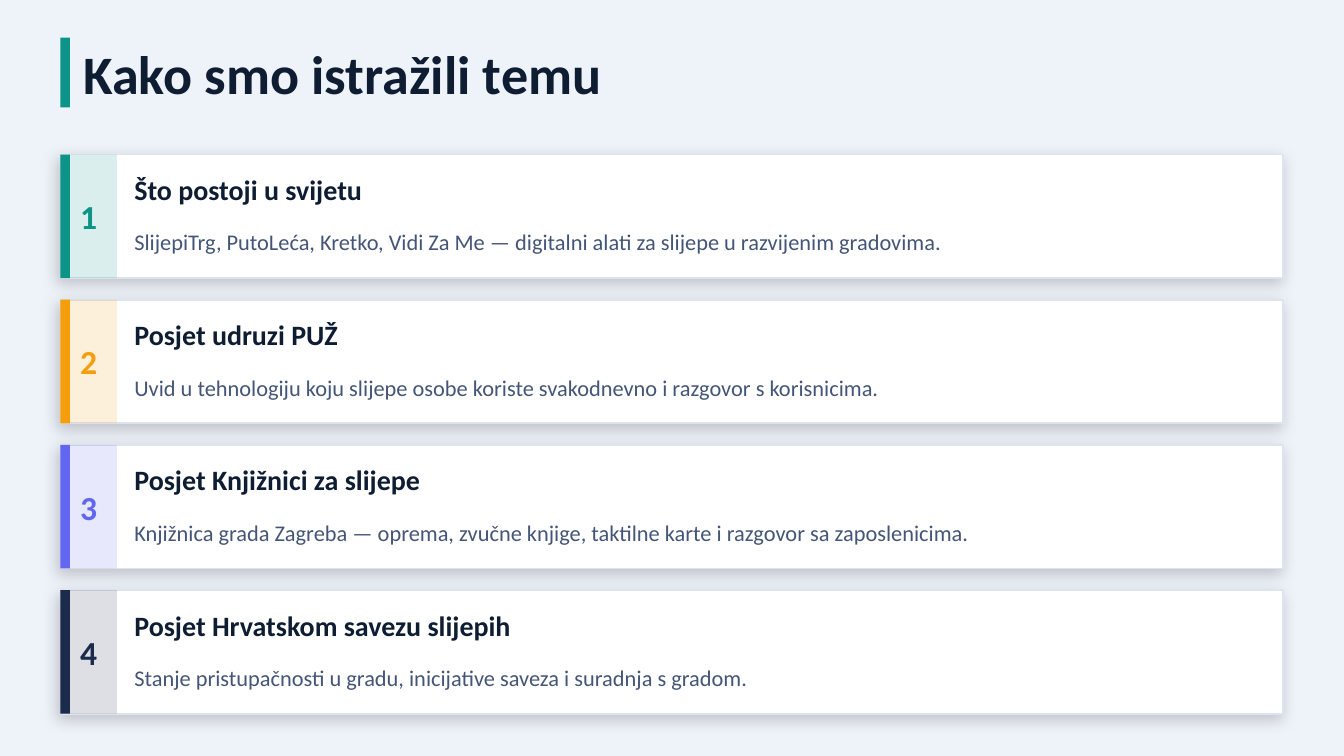
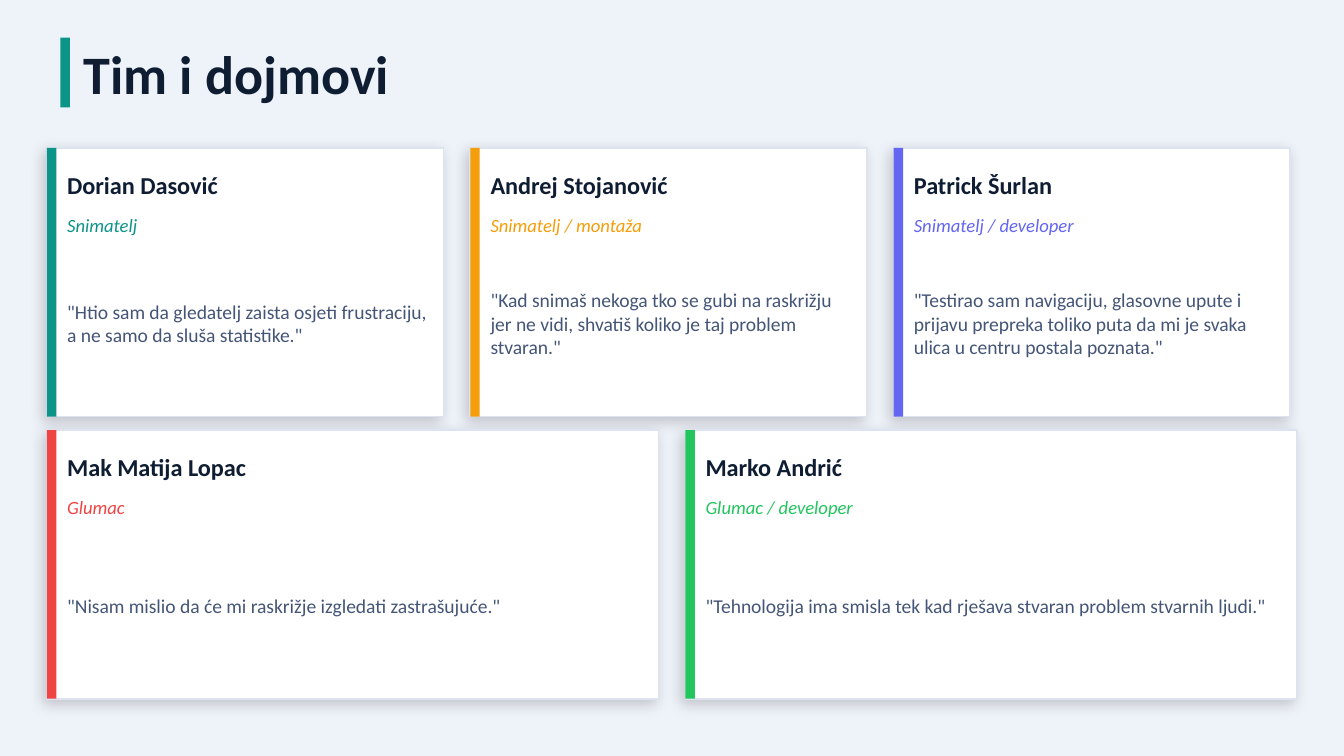
from lxml.etree import SubElement
from pptx import Presentation
from pptx.dml.color import RGBColor
from pptx.enum.shapes import MSO_SHAPE
from pptx.enum.text import MSO_ANCHOR, PP_ALIGN
from pptx.oxml.ns import qn
from pptx.util import Pt

COLORS = {
    "background": "EEF2F9",
    "card": "FFFFFF",
    "border": "DDE3EF",
    "heading": "0F1D33",
    "body": "445577",
    "teal": "0D9488",
    "amber": "F59E0B",
    "indigo": "6366F1",
    "navy": "1B2B4B",
    "red": "EF4444",
    "green": "22C55E",
}
FONT = "Calibri"
BAR_WIDTH = 5.04


def add_block(slide, left, top, width, height, color, opacity=100, raised=False):
    """Rectangle; a raised one gets a border and a soft shadow."""
    block = slide.shapes.add_shape(
        MSO_SHAPE.RECTANGLE, Pt(left), Pt(top), Pt(width), Pt(height))
    block.shadow.inherit = False
    block.fill.solid()
    block.fill.fore_color.rgb = RGBColor.from_string(COLORS[color])
    block.line.fill.background()
    properties = block.element.spPr
    if opacity < 100:
        fill_color = properties.find(qn("a:solidFill")).find(qn("a:srgbClr"))
        SubElement(fill_color, qn("a:alpha"), val=str(opacity * 1000))
    if raised:
        block.line.color.rgb = RGBColor.from_string(COLORS["border"])
        block.line.width = Pt(1)
        shadow = SubElement(
            properties.find(qn("a:effectLst")), qn("a:outerShdw"),
            blurRad=str(Pt(8)), dist=str(Pt(3)), dir=str(135 * 60000),
            algn="bl", rotWithShape="0")
        shadow_color = SubElement(shadow, qn("a:srgbClr"), val="000000")
        SubElement(shadow_color, qn("a:alpha"), val="18000")


def add_label(slide, left, top, width, height, text, size, color,
              bold=False, italic=False, align=PP_ALIGN.LEFT):
    frame = slide.shapes.add_textbox(
        Pt(left), Pt(top), Pt(width), Pt(height)).text_frame
    frame.word_wrap = True
    frame.vertical_anchor = MSO_ANCHOR.MIDDLE
    frame.margin_left = frame.margin_right = 0
    frame.margin_top = frame.margin_bottom = 0
    paragraph = frame.paragraphs[0]
    paragraph.text = text
    paragraph.alignment = align
    paragraph.font.name = FONT
    paragraph.font.size = Pt(size)
    paragraph.font.bold = bold
    paragraph.font.italic = italic
    paragraph.font.color.rgb = RGBColor.from_string(COLORS[color])


presentation = Presentation()
presentation.slide_width = Pt(720)
presentation.slide_height = Pt(405)

# Background and title of both slides
slides = []
for title in ("Kako smo istražili temu", "Tim i dojmovi"):
    slide = presentation.slides.add_slide(presentation.slide_layouts[6])
    slide.background.fill.solid()
    slide.background.fill.fore_color.rgb = RGBColor.from_string(COLORS["background"])
    add_block(slide, 32.4, 20.16, BAR_WIDTH, 37.44, "teal")
    add_label(slide, 44.64, 15.84, 648, 46.8, title, 29, "heading", bold=True)
    slides.append(slide)
research_slide, team_slide = slides

# Slide 1: numbered research steps
steps = [
    ("teal", "Što postoji u svijetu",
     "SlijepiTrg, PutoLeća, Kretko, Vidi Za Me — digitalni alati za slijepe u razvijenim gradovima."),
    ("amber", "Posjet udruzi PUŽ",
     "Uvid u tehnologiju koju slijepe osobe koriste svakodnevno i razgovor s korisnicima."),
    ("indigo", "Posjet Knjižnici za slijepe",
     "Knjižnica grada Zagreba — oprema, zvučne knjige, taktilne karte i razgovor sa zaposlenicima."),
    ("navy", "Posjet Hrvatskom savezu slijepih",
     "Stanje pristupačnosti u gradu, inicijative saveza i suradnja s gradom."),
]
step_left, step_height, step_pitch = 32.4, 66.24, 77.76
number_width = 30.24
for number, (accent, heading, detail) in enumerate(steps, start=1):
    top = 82.8 + (number - 1) * step_pitch
    add_block(research_slide, step_left, top, 655.2, step_height, "card", raised=True)
    add_block(research_slide, step_left, top, BAR_WIDTH, step_height, accent)
    add_block(research_slide, step_left, top, number_width, step_height, accent, opacity=15)
    add_label(research_slide, step_left, top, number_width, step_height,
              str(number), 18, accent, bold=True, align=PP_ALIGN.CENTER)
    add_label(research_slide, 72, top + 7.2, 597.6, 23.04, heading, 15, "heading", bold=True)
    add_label(research_slide, 72, top + 33.12, 597.6, 27.36, detail, 12, "body")

# Slide 2: team members, one card width per row
team_rows = [
    (212.4, [
        ("teal", "Dorian Dasović", "Snimatelj",
         '"Htio sam da gledatelj zaista osjeti frustraciju, a ne samo da sluša statistike."'),
        ("amber", "Andrej Stojanović", "Snimatelj / montaža",
         '"Kad snimaš nekoga tko se gubi na raskrižju jer ne vidi, '
         'shvatiš koliko je taj problem stvaran."'),
        ("indigo", "Patrick Šurlan", "Snimatelj / developer",
         '"Testirao sam navigaciju, glasovne upute i prijavu prepreka '
         'toliko puta da mi je svaka ulica u centru postala poznata."'),
    ]),
    (327.6, [
        ("red", "Mak Matija Lopac", "Glumac",
         '"Nisam mislio da će mi raskrižje izgledati zastrašujuće."'),
        ("green", "Marko Andrić", "Glumac / developer",
         '"Tehnologija ima smisla tek kad rješava stvaran problem stvarnih ljudi."'),
    ]),
]
member_height, column_gap, row_gap = 144, 14.4, 7.2
for row, (member_width, members) in enumerate(team_rows):
    top = 79.2 + row * (member_height + row_gap)
    for column, (accent, member, role, quote) in enumerate(members):
        left = 25.2 + column * (member_width + column_gap)
        text_left, text_width = left + 10.8, member_width - 18
        add_block(team_slide, left, top, member_width, member_height, "card", raised=True)
        add_block(team_slide, left, top, BAR_WIDTH, member_height, accent)
        add_label(team_slide, text_left, top + 7.2, text_width, 25.2,
                  member, 13, "heading", bold=True)
        add_label(team_slide, text_left, top + 32.4, text_width, 18,
                  role, 10, accent, italic=True)
        add_label(team_slide, text_left, top + 52.56, text_width, 82.8, quote, 10.5, "body")

presentation.save("out.pptx")
